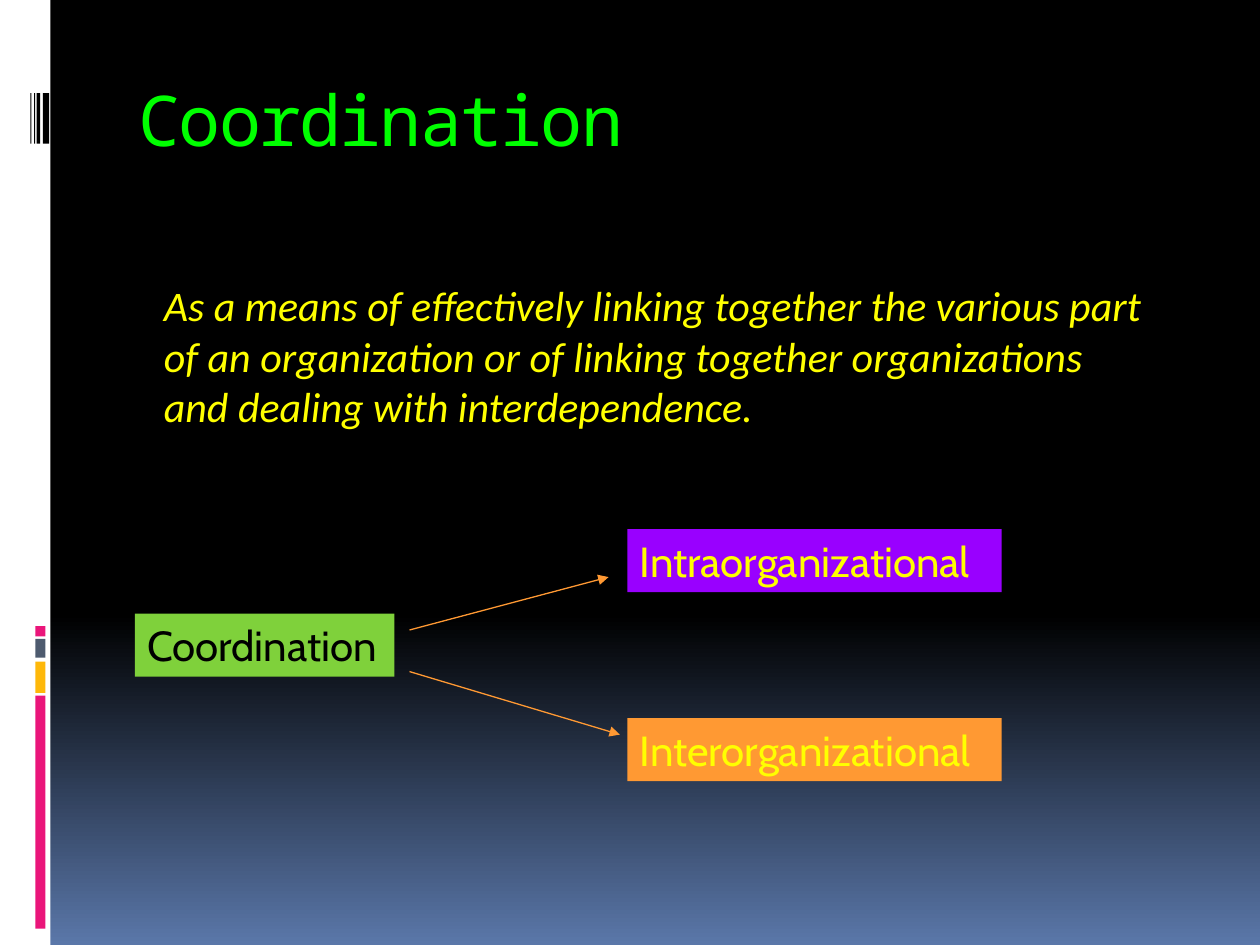
import pptx
import pptx.util
import pptx.dml.color
import pptx.enum.shapes
import pptx.enum.text
import pptx.oxml.ns
import lxml.etree

Inches = pptx.util.Inches
Pt = pptx.util.Pt
RGBColor = pptx.dml.color.RGBColor
qn = pptx.oxml.ns.qn

BLACK = RGBColor(0x00, 0x00, 0x00)
WHITE = RGBColor(0xFF, 0xFF, 0xFF)
BLUE = RGBColor(0x5A, 0x77, 0xA9)
PINK = RGBColor(0xEA, 0x15, 0x7A)
AMBER = RGBColor(0xFE, 0xB8, 0x0A)
SLATE = RGBColor(0x4E, 0x5B, 0x6F)
LIME = RGBColor(0x00, 0xFF, 0x00)
YELLOW = RGBColor(0xFF, 0xFF, 0x00)
GREEN = RGBColor(0x7F, 0xD1, 0x3B)
PURPLE = RGBColor(0x99, 0x00, 0xFF)
ORANGE = RGBColor(0xFF, 0x99, 0x33)

deck = pptx.Presentation()
deck.slide_width = Inches(10)
deck.slide_height = Inches(7.5)
slide = deck.slides.add_slide(deck.slide_layouts[5])

background = slide.background.fill
background.gradient()
background.gradient_angle = 270
for stop, position, color in zip(background.gradient_stops, (0.65, 1), (BLACK, BLUE)):
    stop.position = position
    stop.color.rgb = color


def add_block(left, top, width, height, color):
    block = slide.shapes.add_shape(
        pptx.enum.shapes.MSO_SHAPE.RECTANGLE,
        Inches(left), Inches(top), Inches(width), Inches(height))
    block.shadow.inherit = False
    block.fill.solid()
    block.fill.fore_color.rgb = color
    block.line.fill.background()
    return block


def write_text(box, text, font_name, size, color):
    frame = box.text_frame
    frame.text = text
    frame.word_wrap = True
    para = frame.paragraphs[0]
    para.alignment = pptx.enum.text.PP_ALIGN.LEFT
    font = para.runs[0].font
    font.name = font_name
    font.size = Pt(size)
    font.color.rgb = color
    return para


add_block(0, 0, 0.4, 7.5, WHITE)
for top, height, color in [(5.52, 1.85, PINK), (5.25, 0.25, AMBER),
                           (5.07, 0.15, SLATE), (4.97, 0.08, PINK)]:
    add_block(0.28, top, 0.08, height, color)
for left, width in [(0.34, 0.05), (0.29, 0.03), (0.27, 0.01), (0.24, 0.01)]:
    add_block(left, 0.74, width, 0.4, BLACK)

title = slide.shapes.title
title.left, title.top = Inches(1), Inches(0.56)
title.width, title.height = Inches(8.5), Inches(1)
title_para = write_text(title, "Coordination", "Noto Sans Mono", 40, LIME)
title_para.runs[0].font._element.set("spc", "-100")
title.text_frame.vertical_anchor = pptx.enum.text.MSO_ANCHOR.TOP

definition = slide.shapes.add_textbox(Inches(0.75), Inches(2.17), Inches(8.5), Inches(1.42))
definition.text_frame.margin_left = Inches(0.55)
definition_para = write_text(
    definition,
    "As a means of effectively linking together the various part of an organization "
    "or of linking together organizations and dealing with interdependence.",
    "Calibri", 24, YELLOW)
definition_para.space_before = Pt(7)
definition_para.runs[0].font.italic = True

for text, left, top, width, fill_color, text_color in [
        ("Coordination", 1.07, 4.87, 2.06, GREEN, BLACK),
        ("Intraorganizational", 4.98, 4.2, 2.97, PURPLE, YELLOW),
        ("Interorganizational", 4.98, 5.7, 2.97, ORANGE, YELLOW)]:
    box = add_block(left, top, width, 0.5, fill_color)
    write_text(box, text, "Cabin", 24, text_color)

for start_y, end_x, end_y in [(5, 4.83, 4.58), (5.33, 4.92, 5.83)]:
    arrow = slide.shapes.add_connector(
        pptx.enum.shapes.MSO_CONNECTOR.STRAIGHT,
        Inches(3.25), Inches(start_y), Inches(end_x), Inches(end_y))
    arrow.line.color.rgb = ORANGE
    arrow.line.width = Pt(0.75)
    lxml.etree.SubElement(arrow.line._get_or_add_ln(), qn("a:tailEnd"), type="triangle")
    lxml.etree.SubElement(arrow._element.spPr, qn("a:effectLst"))

deck.save("out.pptx")
